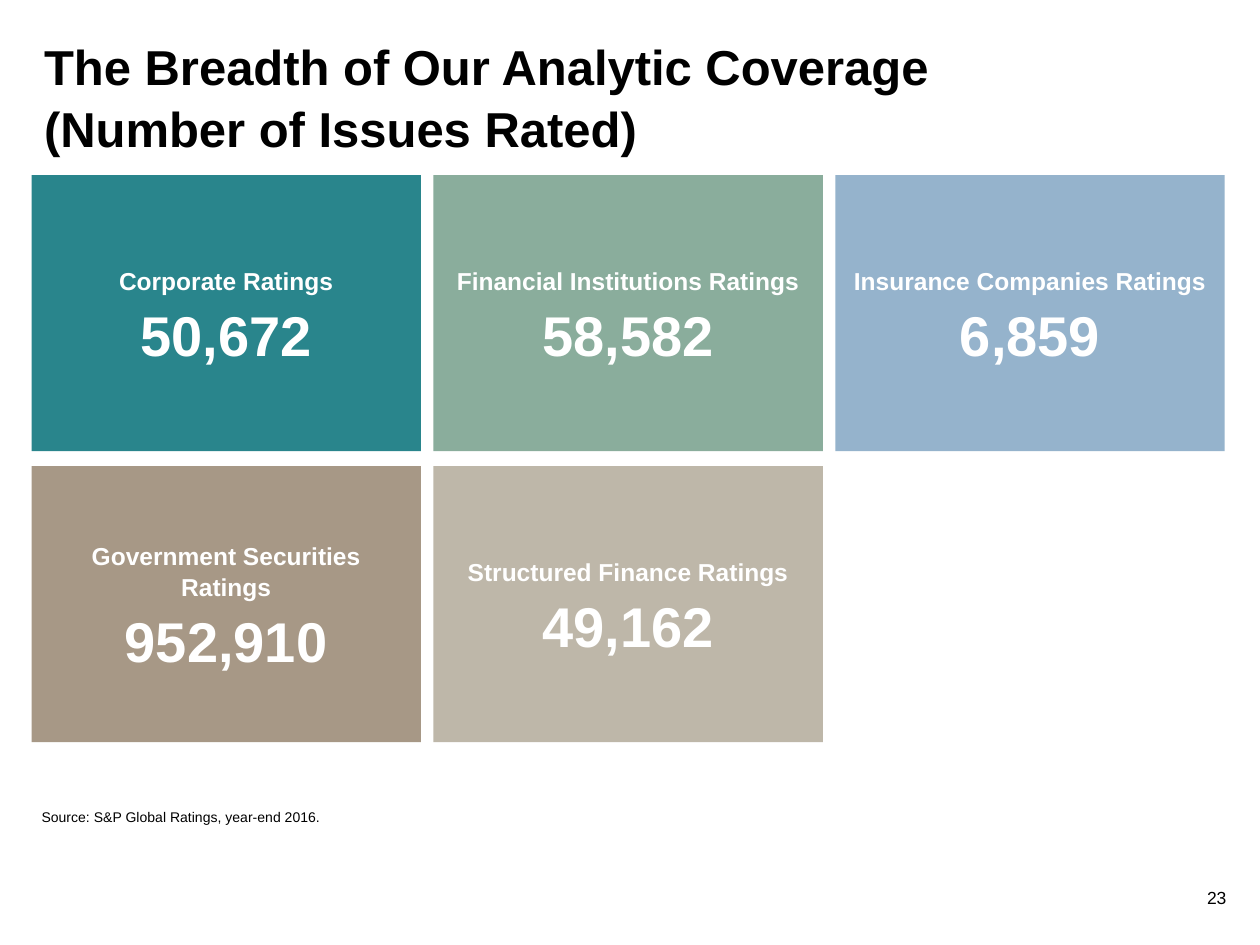
from pptx import Presentation
from pptx.dml.color import RGBColor
from pptx.enum.shapes import MSO_SHAPE
from pptx.enum.text import MSO_ANCHOR, PP_ALIGN
from pptx.util import Inches, Pt

RECTANGLE = MSO_SHAPE.RECTANGLE
TOP, MIDDLE, BOTTOM = MSO_ANCHOR.TOP, MSO_ANCHOR.MIDDLE, MSO_ANCHOR.BOTTOM
CENTER = PP_ALIGN.CENTER

FONT = "Arial"
BLACK = RGBColor(0x00, 0x00, 0x00)
WHITE = RGBColor(0xFF, 0xFF, 0xFF)
TEAL = RGBColor(0x29, 0x85, 0x8C)
SAGE = RGBColor(0x8A, 0xAD, 0x9C)
BLUE = RGBColor(0x95, 0xB3, 0xCC)
BROWN = RGBColor(0xA7, 0x98, 0x86)
SAND = RGBColor(0xBE, 0xB7, 0xA9)

# Tile grid, in inches
COLUMNS = 3
GRID_LEFT, GRID_TOP = 0.25, 1.39
TILE_WIDTH, TILE_HEIGHT = 3.09, 2.19
COLUMN_GAP, ROW_GAP = 0.1, 0.12

TILES = [
    ("Corporate Ratings", "50,672", TEAL),
    ("Financial Institutions Ratings", "58,582", SAGE),
    ("Insurance Companies Ratings", "6,859", BLUE),
    ("Government Securities Ratings", "952,910", BROWN),
    ("Structured Finance Ratings", "49,162", SAND),
]


def style_paragraph(para, size, color, bold=False, spacing=1.0):
    para.line_spacing = spacing
    for span in para.runs:
        span.font.name = FONT
        span.font.size = Pt(size)
        span.font.bold = bold
        span.font.color.rgb = color


def add_text(page, text, left, top, width, height, size, bold=False,
             spacing=1.0, anchor=TOP, bottom_margin=0.0):
    box = page.shapes.add_textbox(Inches(left), Inches(top),
                                  Inches(width), Inches(height))
    frame = box.text_frame
    frame.word_wrap = True
    frame.vertical_anchor = anchor
    frame.margin_left = frame.margin_right = frame.margin_top = 0
    frame.margin_bottom = Inches(bottom_margin)
    frame.text = text
    style_paragraph(frame.paragraphs[0], size, BLACK, bold, spacing)


def add_tile(group, index, label, count, color):
    row, column = divmod(index, COLUMNS)
    tile = group.shapes.add_shape(
        RECTANGLE,
        Inches(GRID_LEFT + column * (TILE_WIDTH + COLUMN_GAP)),
        Inches(GRID_TOP + row * (TILE_HEIGHT + ROW_GAP)),
        Inches(TILE_WIDTH), Inches(TILE_HEIGHT))
    tile.shadow.inherit = False
    tile.fill.solid()
    tile.fill.fore_color.rgb = color
    tile.line.fill.background()

    frame = tile.text_frame
    frame.word_wrap = True
    frame.vertical_anchor = MIDDLE
    frame.margin_top = Inches(0.09)
    frame.text = f"{label}\n{count}"
    for para, size in zip(frame.paragraphs, (14, 32)):
        para.alignment = CENTER
        style_paragraph(para, size, WHITE, bold=True, spacing=1.05)
    frame.paragraphs[1].space_before = Pt(1)


def main():
    deck = Presentation()
    deck.slide_width, deck.slide_height = Inches(10), Inches(7.5)
    page = deck.slides.add_slide(deck.slide_layouts[6])

    # Title, with a line break inside one paragraph
    add_text(page, "The Breadth of Our Analytic Coverage \v(Number of Issues Rated)",
             0.35, 0.27, 8.88, 0.87, 28, bold=True, spacing=1.05)

    # Rating tiles
    group = page.shapes.add_group_shape()
    for index, (label, count, color) in enumerate(TILES):
        add_tile(group, index, label, count, color)

    # Source line and page number
    add_text(page, "Source: S&P Global Ratings, year-end 2016.",
             0.33, 6.4, 9.5, 0.25, 8, spacing=1.1, anchor=BOTTOM,
             bottom_margin=0.1)
    add_text(page, "23", 9.58, 7.04, 0.23, 0.28, 10)

    deck.save("out.pptx")


if __name__ == "__main__":
    main()
